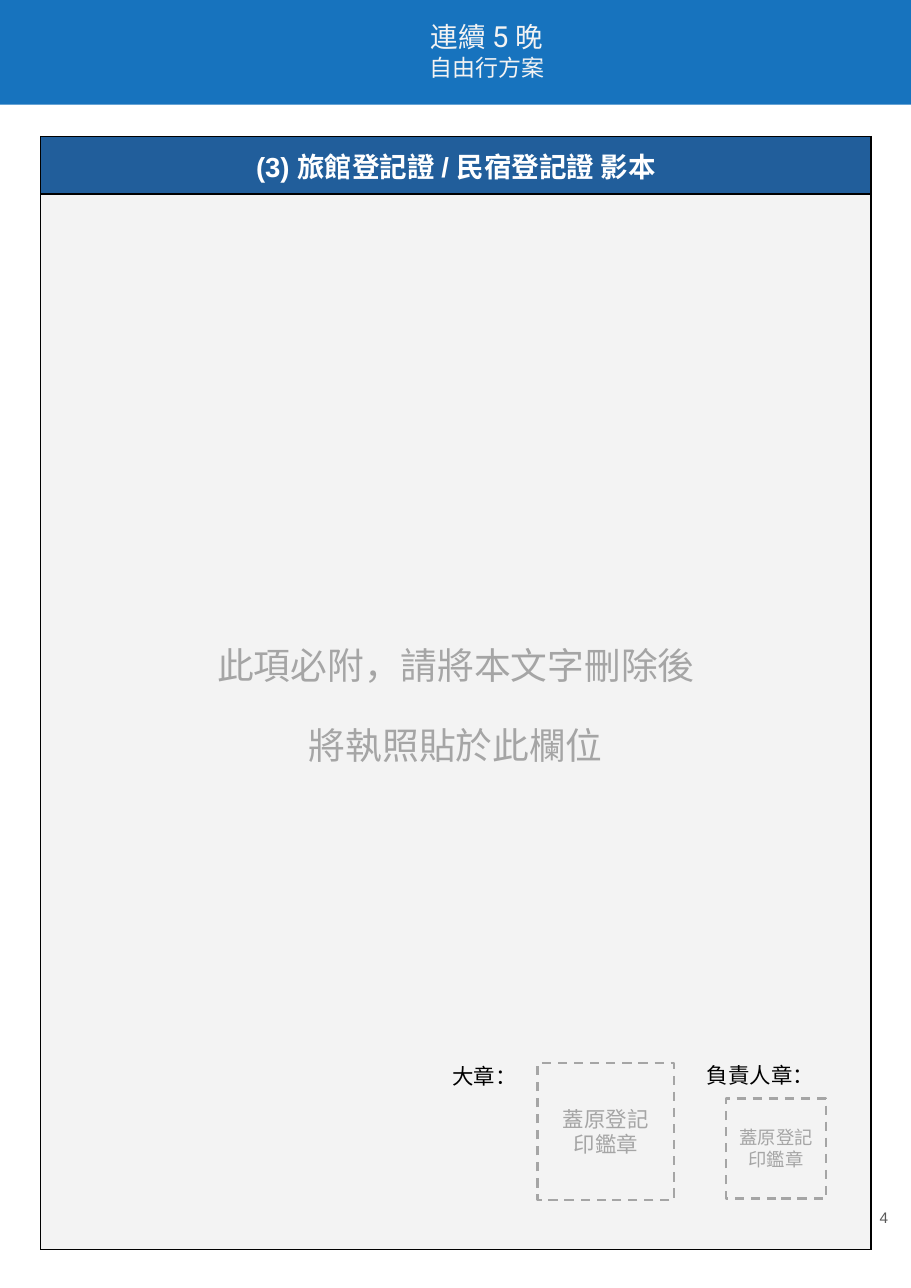
import pptx
import pptx.dml.color
import pptx.enum.dml
import pptx.enum.shapes
import pptx.enum.text
import pptx.oxml
import pptx.oxml.ns
import pptx.util

THEME = {
    "band": "1773BE", "header": "215E9B", "panel": "F3F3F3", "white": "FFFFFF",
    "black": "000000", "hint": "A5A5A5", "number": "595959",
    "body": "Arial", "title": "Roboto",
    "hint_size": 24, "head_size": 18, "digit_size": 19, "sub_size": 15,
    "label_size": 14, "small_size": 12, "number_size": 10,
}
ALIGN = pptx.enum.text.PP_ALIGN
MIDDLE = pptx.enum.text.MSO_ANCHOR.MIDDLE
RGB = pptx.dml.color.RGBColor.from_string

prs = pptx.Presentation()
prs.slide_width = pptx.util.Inches(8.27)
prs.slide_height = pptx.util.Inches(11.69)
s = prs.slides.add_slide(prs.slide_layouts[5])


def area(left, top, width, height):
    """Turn percentages of the slide's width and height into lengths."""
    w, h = prs.slide_width / 100, prs.slide_height / 100
    return [round(n) for n in (left * w, top * h, width * w, height * h)]


def write(tf, lines, color, align=ALIGN.CENTER, font="body", bold=False, spacing=None):
    """Fill a text frame; each line is a list of (text, size name) runs."""
    tf.word_wrap = True
    for i, line in enumerate(lines):
        p = tf.paragraphs[0] if i == 0 else tf.add_paragraph()
        p.alignment = align
        p.line_spacing = spacing
        for text, size in line:
            r = p.add_run()
            r.text = text
            r.font.name = THEME[font]
            r.font.size = pptx.util.Pt(THEME[size])
            r.font.bold = bold
            r.font.color.rgb = RGB(THEME[color])


# Title band
sp = s.shapes.title
sp.left, sp.top, sp.width, sp.height = area(0, 0, 100, 8.13)
sp.fill.solid()
sp.fill.fore_color.rgb = RGB(THEME["band"])
tf = sp.text_frame
tf.auto_size = pptx.enum.text.MSO_AUTO_SIZE.NONE
tf.vertical_anchor = pptx.enum.text.MSO_ANCHOR.TOP
tf.margin_left, tf.margin_top = area(6.9, 1.45, 0, 0)[:2]
tf.margin_right = tf.margin_bottom = 0
write(tf, [[("連續 ", "head_size"), ("5", "digit_size"), (" 晚", "head_size")],
           [("自由行方案", "sub_size")]], "panel", font="title")

# Licence table
table = s.shapes.add_table(2, 1, *area(4.47, 10.61, 91.13, 86.4)).table
rows = [
    (4.45, "header", [[("(3) 旅館登記證 / 民宿登記證 影本", "head_size")]], "white", True, None),
    (81.95, "panel", [[("此項必附，請將本文字刪除後", "hint_size")],
                      [("將執照貼於此欄位", "hint_size")]], "hint", False, 1.5),
]
for i, (height, fill, lines, color, bold, spacing) in enumerate(rows):
    table.rows[i].height = area(0, 0, 0, height)[3]
    cell = table.cell(i, 0)
    cell.vertical_anchor = MIDDLE
    for side in "LRTB":
        cell._tc.get_or_add_tcPr().append(pptx.oxml.parse_xml(
            f'<a:ln{side} {pptx.oxml.ns.nsdecls("a")} w="12700"><a:solidFill>'
            f'<a:srgbClr val="{THEME["black"]}"/></a:solidFill></a:ln{side}>'))
    cell.fill.solid()
    cell.fill.fore_color.rgb = RGB(THEME[fill])
    write(cell.text_frame, lines, color, bold=bold, spacing=spacing)
# The hint sits a little above the middle of its cell
table.cell(1, 0).margin_bottom = area(0, 0, 0, 5.3)[3]

# Page number and stamp labels
tf = s.shapes.add_textbox(*area(92.62, 90.68, 6.05, 7.61)).text_frame
tf.vertical_anchor = MIDDLE
write(tf, [[("4", "number_size")]], "number", ALIGN.RIGHT)

for label, left, top in [("大章：", 48.49, 82.12), ("負責人章：", 76.42, 82.04)]:
    tf = s.shapes.add_textbox(*area(left, top, 14.27, 2.91)).text_frame
    write(tf, [[(label, "label_size")]], "black", ALIGN.LEFT)

# Stamp frames
for left, top, width, height, size in [(59.01, 82.55, 14.99, 10.61, "label_size"),
                                       (79.69, 85.29, 11, 7.78, "small_size")]:
    sp = s.shapes.add_shape(pptx.enum.shapes.MSO_SHAPE.RECTANGLE,
                            *area(left, top, width, height))
    sp.shadow.inherit = False
    sp.fill.background()
    sp.line.color.rgb = RGB(THEME["hint"])
    sp.line.width = pptx.util.Pt(1.5)
    sp.line.dash_style = pptx.enum.dml.MSO_LINE.DASH
    sp.text_frame.vertical_anchor = MIDDLE
    write(sp.text_frame, [[("蓋原登記", size)], [("印鑑章", size)]], "hint")

prs.save("out.pptx")
